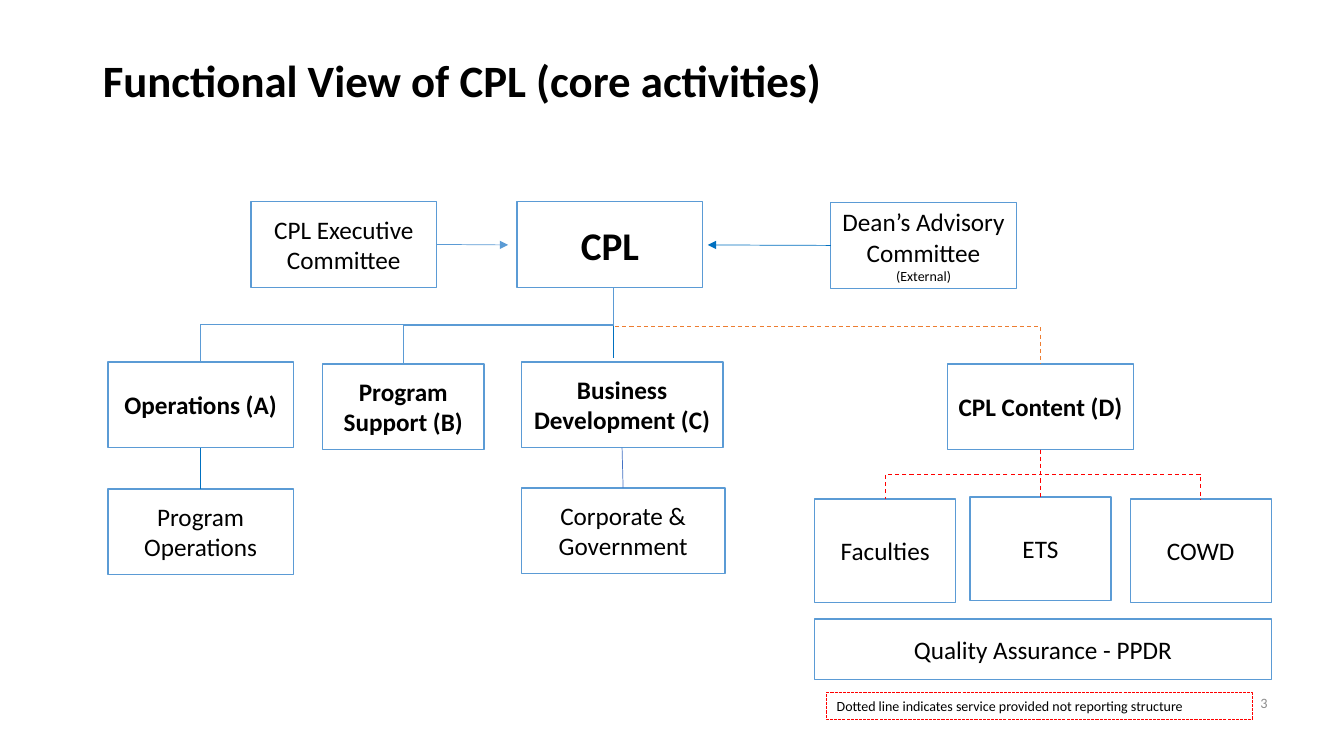
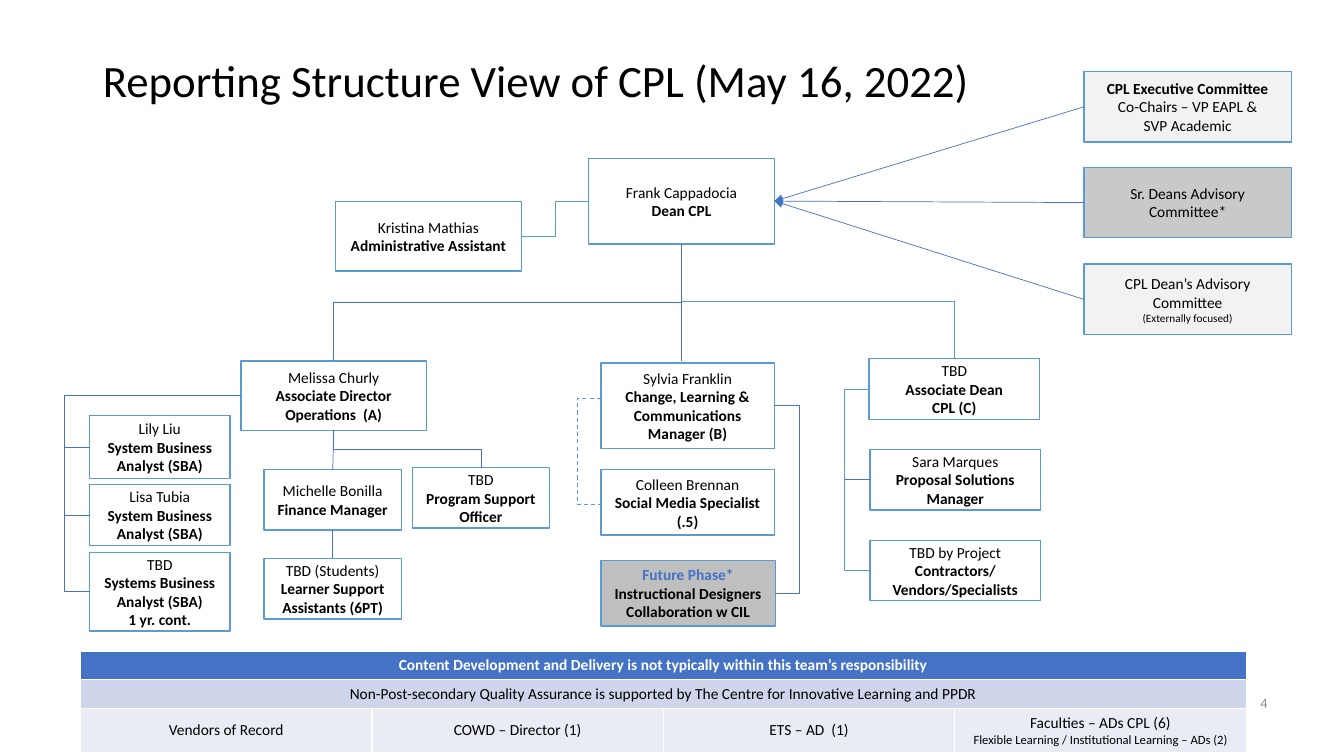
from lxml import etree
from pptx import Presentation
from pptx.dml.color import RGBColor
from pptx.enum.dml import MSO_LINE as DASH
from pptx.enum.shapes import MSO_CONNECTOR as CXN, MSO_SHAPE as SHAPE
from pptx.enum.text import MSO_ANCHOR as ANCHOR, PP_ALIGN as ALIGN
from pptx.oxml.ns import qn
from pptx.util import Inches, Pt

FONT = "Calibri"
COLORS = {
    "black": "000000", "white": "FFFFFF", "number": "8C8C8C",
    "edge": "5B9BD5", "blue": "4472C4", "deep": "0070C0",
    "orange": "ED7D31", "red": "FF0000",
    "pale": "F2F2F2", "silver": "C9C9C9", "grey": "BFBFBF",
    "band": "CFD5EA", "band_light": "E9EBF5",
}
TOP, LEFT, BOTTOM, RIGHT = range(4)
BOLD = {"bold": True}

FUNCTIONAL = {
    "title": "Functional View of CPL (core activities)",
    "title_bold": True,
    "number": "3",
    "size": 18,
    "boxes": {
        "cpl": (5.13, 2, 1.84, 0.85, [("CPL", {"bold": True, "size": 28})]),
        "business": (5.17, 3.59, 2, 0.85, [("Business Development (C)", BOLD)]),
        "operations": (1.07, 3.59, 1.84, 0.85, [("Operations (A)", BOLD)]),
        "content": (9.4, 3.61, 1.84, 0.85, [("CPL Content (D)", BOLD)]),
        "support": (3.2, 3.61, 1.6, 0.85, [("Program Support (B)", BOLD)]),
        "program": (1.07, 4.85, 1.84, 0.85, ["Program Operations"]),
        "ets": (9.62, 4.93, 1.4, 1.03, ["ETS"]),
        "cowd": (11.21, 4.95, 1.4, 1.03, ["COWD"]),
        "faculties": (8.08, 4.95, 1.4, 1.03, ["Faculties"]),
        "corporate": (5.17, 4.84, 2.02, 0.85, ["Corporate & Government"]),
        "executive": (2.49, 2, 1.84, 0.85, ["CPL Executive Committee"]),
        "advisory": (8.24, 2.01, 1.84, 0.85,
                     ["Dean’s Advisory Committee", ("(External)", {"size": 10})]),
        "quality": (8.08, 6.14, 4.53, 0.6, ["Quality Assurance - PPDR"]),
    },
    "fills": {},
    "lines": [
        (("operations", BOTTOM), ("program", TOP), "deep", {}),
        (("business", BOTTOM), ("corporate", TOP), "blue", {}),
        (("content", BOTTOM), ("ets", TOP), "red", {"dash": True}),
        ((6.08, 2.85), (6.08, 3.55), "deep", {}),
        (("executive", RIGHT), (5.04, 2.43), "edge", {"arrow": True}),
        (("advisory", LEFT), (7.02, 2.43), "deep", {"arrow": True}),
    ],
    "elbows": [
        ((6.08, 2.85), ("operations", TOP), "edge", {}),
        ((6.08, 2.85), ("support", TOP), "edge", {}),
        (("content", BOTTOM), ("faculties", TOP), "red", {"dash": True}),
        (("content", BOTTOM), ("cowd", TOP), "red", {"dash": True}),
        ((6.1, 3.24), ("content", TOP), "orange", {"dash": True, "corner": True}),
    ],
}

REPORTING = {
    "title": "Reporting Structure View of CPL (May 16, 2022)",
    "title_bold": False,
    "number": "4",
    "size": 11,
    "boxes": {
        "dean": (5.84, 1.57, 1.84, 0.85, ["Frank Cappadocia", ("Dean CPL", BOLD)]),
        "associate": (8.62, 3.56, 1.69, 0.6,
                      ["TBD", ("Associate Dean", BOLD), ("CPL (C)", BOLD)]),
        "director": (2.39, 3.58, 1.84, 0.69,
                     ["Melissa Churly", ("Associate Director Operations  (A)", BOLD)]),
        "finance": (2.62, 4.66, 1.36, 0.6,
                    ["Michelle Bonilla", ("Finance Manager", BOLD)]),
        "change": (5.96, 3.6, 1.72, 0.85,
                   ["Sylvia Franklin",
                    ("Change, Learning & Communications Manager (B)", BOLD)]),
        "analyst_1": (0.89, 4.12, 1.39, 0.63,
                      ["Lily Liu", ("System Business Analyst (SBA)", BOLD)]),
        "analyst_2": (0.89, 4.81, 1.39, 0.6,
                      ["Lisa Tubia", ("System Business Analyst (SBA)", BOLD)]),
        "analyst_3": (0.89, 5.48, 1.39, 0.78,
                      ["TBD", ("Systems Business Analyst (SBA)", BOLD),
                       ("1 yr. cont.", BOLD)]),
        "officer": (4.09, 4.64, 1.36, 0.6,
                    ["TBD", ("Program Support Officer", BOLD)]),
        "learner": (2.62, 5.54, 1.36, 0.6,
                    ["TBD (Students)", ("Learner Support Assistants (6PT)", BOLD)]),
        "social": (5.96, 4.66, 1.72, 0.65,
                   ["Colleen Brennan", ("Social Media Specialist (.5)", BOLD)]),
        "future": (5.96, 5.56, 1.73, 0.65,
                   [("Future Phase*", {"bold": True, "color": "blue"}),
                    ("Instructional Designers Collaboration w CIL", BOLD)]),
        "proposal": (8.63, 4.46, 1.69, 0.6,
                     ["Sara Marques", ("Proposal Solutions Manager", BOLD)]),
        "contractors": (8.63, 5.36, 1.69, 0.6,
                        ["TBD by Project", ("Contractors/ Vendors/Specialists", BOLD)]),
        "assistant": (3.33, 2, 1.84, 0.69,
                      ["Kristina Mathias", ("Administrative Assistant", BOLD)]),
        "executive": (10.75, 0.71, 2.06, 0.7,
                      [("CPL Executive Committee", BOLD),
                       "Co-Chairs – VP EAPL &", "SVP Academic"]),
        "senior": (10.75, 1.66, 2.06, 0.7, ["Sr. Deans Advisory Committee*"]),
        "advisory": (10.75, 2.62, 2.06, 0.7,
                     ["CPL Dean’s Advisory Committee",
                      ("(Externally focused)", {"size": 8})]),
    },
    "fills": {"executive": "pale", "advisory": "pale",
              "senior": "silver", "future": "grey"},
    "lines": [
        *(((key, LEFT), ("dean", RIGHT), "blue", {"arrow": True})
          for key in ("executive", "senior", "advisory")),
        (("dean", BOTTOM), (6.76, 3.58), "blue", {}),
        (("director", BOTTOM), ("finance", TOP), "blue", {}),
        (("finance", BOTTOM), ("learner", TOP), "blue", {}),
    ],
    "elbows": [
        *((("director", LEFT), (key, LEFT), "blue", {"mid": 0.64})
          for key in ("analyst_1", "analyst_2", "analyst_3")),
        (("associate", LEFT), ("proposal", LEFT), "blue", {"mid": 8.37}),
        (("associate", LEFT), ("contractors", LEFT), "edge", {"mid": 8.37}),
        (("dean", LEFT), ("assistant", RIGHT), "edge", {"mid": 5.51}),
        ((5.96, 3.95), (5.95, 5.01), "edge", {"mid": 5.72, "dash": True}),
        (("change", RIGHT), ("future", RIGHT), "blue", {"mid": 7.93}),
        (("dean", BOTTOM), ("director", TOP), "blue", {}),
        (("director", BOTTOM), ("officer", TOP), "blue", {}),
        ((6.76, 2.99), ("associate", TOP), "edge", {"corner": True}),
    ],
}

NOTE = "Dotted line indicates service provided not reporting structure"
TABLE_ROWS = [
    (0.28, "blue", [["Content Development and Delivery is not typically "
                     "within this team’s responsibility"]]),
    (0.28, "band", [["Non-Post-secondary Quality Assurance is supported by "
                     "The Centre for Innovative Learning and PPDR"]]),
    (0.43, "band_light", [
        ["Vendors of Record"], ["COWD – Director (1)"], ["ETS – AD  (1)"],
        ["Faculties – ADs CPL (6)",
         ("Flexible Learning / Institutional Learning – ADs (2)", {"size": 9})]]),
]


def rgb(name):
    return RGBColor.from_string(COLORS[name])


def write(tf, paragraphs, size=18, bold=False, color="black",
          align=ALIGN.CENTER, spacing=None):
    tf.word_wrap = True
    for i, item in enumerate(paragraphs):
        text, own = (item, {}) if isinstance(item, str) else item
        p = tf.paragraphs[0] if i == 0 else tf.add_paragraph()
        p.alignment = align
        if spacing:
            p.line_spacing = spacing
        r = p.add_run()
        r.text = text
        r.font.name = FONT
        r.font.size = Pt(own.get("size", size))
        r.font.bold = own.get("bold", bold)
        r.font.color.rgb = rgb(own.get("color", color))


def add_box(s, x, y, w, h, fill="white", edge="edge", weight=1):
    sp = s.shapes.add_shape(SHAPE.RECTANGLE, *map(Inches, (x, y, w, h)))
    sp.shadow.inherit = False
    if fill:
        sp.fill.solid()
        sp.fill.fore_color.rgb = rgb(fill)
    else:
        sp.fill.background()
    sp.line.color.rgb = rgb(edge)
    sp.line.width = Pt(weight)
    sp.text_frame.vertical_anchor = ANCHOR.MIDDLE
    return sp


def locate(boxes, end):
    key, side = end
    if not isinstance(key, str):
        return end
    x, y, w, h = boxes[key][:4]
    return [(x + w / 2, y), (x, y + h / 2),
            (x + w / 2, y + h), (x + w, y + h / 2)][side]


def connect(s, kind, start, end, color, dash=False, arrow=False):
    c = s.shapes.add_connector(kind, *map(Inches, (*start, *end)))
    c.line.color.rgb = rgb(color)
    c.line.width = Pt(0.75 if dash else 0.5)
    if dash:
        c.line.dash_style = DASH.DASH
    spPr = c._element.spPr
    if arrow:
        etree.SubElement(spPr.find(qn("a:ln")), qn("a:tailEnd"), type="triangle")
    etree.SubElement(spPr, qn("a:effectLst"))
    return c


def add_line(s, boxes, shapes, start, end, color, style):
    c = connect(s, CXN.STRAIGHT, locate(boxes, start), locate(boxes, end),
                color, **style)
    for (key, side), join in ((start, c.begin_connect), (end, c.end_connect)):
        if isinstance(key, str):
            join(shapes[key], side)


def add_elbow(s, start, end, color, mid=None, corner=False, dash=False):
    (x1, y1), (x2, y2) = start, end
    if mid is None and not corner:
        cx, cy = (x1 + x2) / 2, (y1 + y2) / 2
        half_w, half_h = (y2 - y1) / 2, abs(x2 - x1) / 2
        rightward = x2 > x1
        if rightward:
            half_w = -half_w
        c = connect(s, CXN.ELBOW, (cx - half_w, cy - half_h),
                    (cx + half_w, cy + half_h), color, dash)
        c.rotation = 270 if rightward else 90
        return
    if abs(x2 - x1) < 0.01:
        x2 = x1 + 0.01
    c = connect(s, CXN.ELBOW, (x1, y1), (x2, y2), color, dash)
    geom = c._element.spPr.find(qn("a:prstGeom"))
    if corner:
        geom.set("prst", "bentConnector2")
        return
    guides = geom.find(qn("a:avLst"))
    if guides is None:
        guides = etree.SubElement(geom, qn("a:avLst"))
    share = round((mid - x1) / (x2 - x1) * 100000)
    etree.SubElement(guides, qn("a:gd"), name="adj1", fmla=f"val {share}")


def add_chart_slide(prs, data):
    s = prs.slides.add_slide(prs.slide_layouts[5])
    title = s.shapes.title
    title.left, title.top, title.width, title.height = map(
        Inches, (0.92, 0.4, 11.5, 0.85))
    title.text_frame.vertical_anchor = ANCHOR.MIDDLE
    write(title.text_frame, [data["title"]], size=32, bold=data["title_bold"],
          align=ALIGN.LEFT, spacing=0.9)

    boxes, shapes = data["boxes"], {}
    for key, (x, y, w, h, paragraphs) in boxes.items():
        shapes[key] = add_box(s, x, y, w, h, data["fills"].get(key, "white"))
        write(shapes[key].text_frame, paragraphs, size=data["size"])
    for start, end, color, style in data["lines"]:
        add_line(s, boxes, shapes, start, end, color, style)
    for start, end, color, style in data["elbows"]:
        add_elbow(s, locate(boxes, start), locate(boxes, end), color, **style)

    number = s.shapes.add_textbox(*map(Inches, (12.26, 6.77, 0.41, 0.4)))
    number.text_frame.vertical_anchor = ANCHOR.MIDDLE
    write(number.text_frame, [data["number"]], size=10.2, color="number",
          align=ALIGN.RIGHT)
    return s


def add_note(s):
    sp = add_box(s, 8.2, 6.87, 4.22, 0.27, fill=None, edge="red", weight=0.75)
    sp.line.dash_style = DASH.SQUARE_DOT
    sp.text_frame.vertical_anchor = ANCHOR.TOP
    write(sp.text_frame, [NOTE], size=10, align=ALIGN.LEFT)


def add_responsibility_table(s):
    columns = len(TABLE_ROWS[-1][2])
    height = sum(row[0] for row in TABLE_ROWS)
    table = s.shapes.add_table(len(TABLE_ROWS), columns, *map(
        Inches, (0.8, 6.46, 11.56, height))).table
    for i, (row_height, fill, cells) in enumerate(TABLE_ROWS):
        table.rows[i].height = Inches(row_height)
        if len(cells) == 1:
            table.cell(i, 0).merge(table.cell(i, columns - 1))
        for j, paragraphs in enumerate(cells):
            cell = table.cell(i, j)
            cell.fill.solid()
            cell.fill.fore_color.rgb = rgb(fill)
            cell.vertical_anchor = ANCHOR.MIDDLE
            write(cell.text_frame, paragraphs, size=11, bold=i == 0,
                  color="white" if i == 0 else "black")


def main():
    prs = Presentation()
    prs.slide_width, prs.slide_height = Inches(13.33), Inches(7.5)
    add_note(add_chart_slide(prs, FUNCTIONAL))
    add_responsibility_table(add_chart_slide(prs, REPORTING))
    prs.save("out.pptx")


if __name__ == "__main__":
    main()
